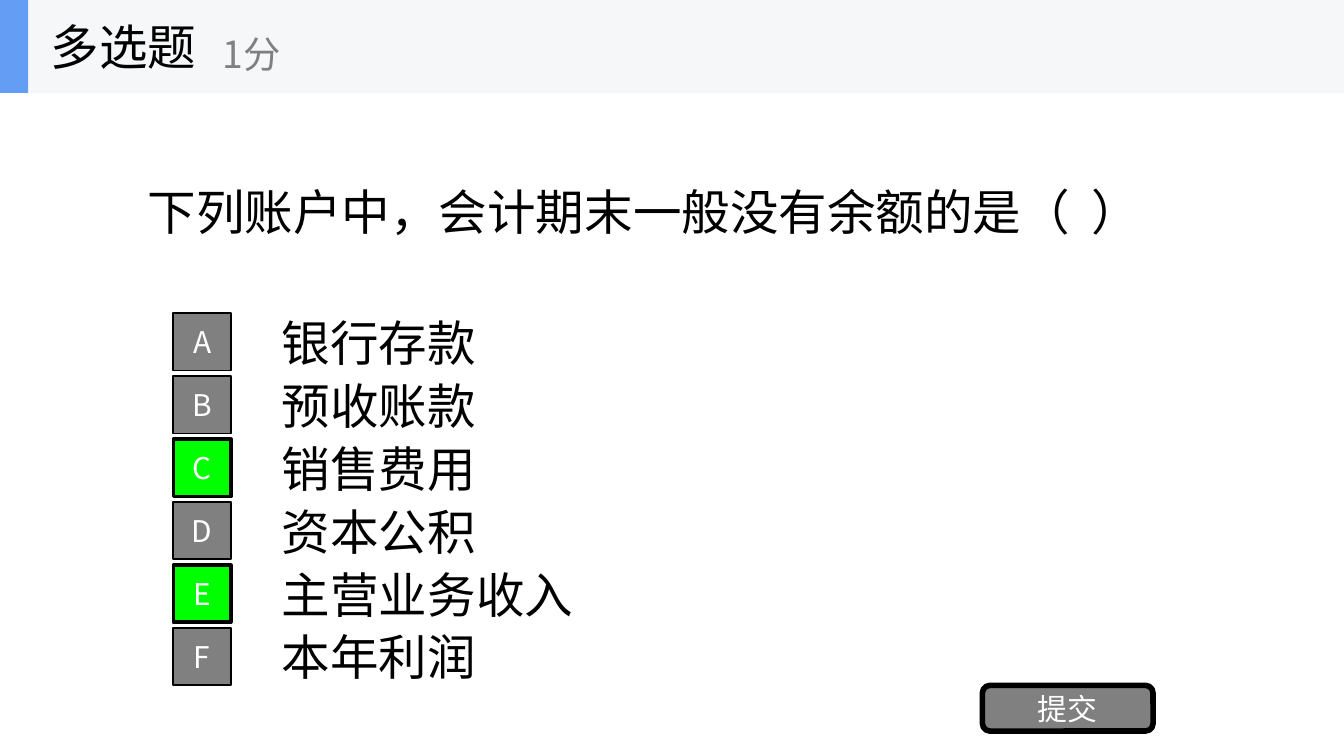
from pptx import Presentation
from pptx.dml.color import RGBColor
from pptx.enum.shapes import MSO_SHAPE
from pptx.enum.text import MSO_ANCHOR, PP_ALIGN
from pptx.oxml.ns import qn
from pptx.util import Inches, Pt
from lxml import etree

RECTANGLE = MSO_SHAPE.RECTANGLE
ROUNDED = MSO_SHAPE.ROUNDED_RECTANGLE
MIDDLE = MSO_ANCHOR.MIDDLE
LEFT, CENTER = PP_ALIGN.LEFT, PP_ALIGN.CENTER

WIDTH = 10
HEIGHT = WIDTH * 9 / 16
FONT = "Noto Sans CJK SC"
COLORS = {
    "text": "000000",
    "muted": "808080",
    "button": "808080",
    "correct": "00FF00",
    "button_text": "FFFFFF",
    "outline": "000000",
    "header": "F6F7F8",
    "accent": "639EF4",
}
QUESTION = "下列账户中，会计期末一般没有余额的是（  ）"
OPTIONS = ["银行存款", "预收账款", "销售费用", "资本公积", "主营业务收入", "本年利润"]
CORRECT = "CE"


def color(name):
    return RGBColor.from_string(COLORS[name])


def write(shape, text, size=26, ink="text", align=LEFT):
    frame = shape.text_frame
    frame.word_wrap = True
    frame.vertical_anchor = MIDDLE
    paragraph = frame.paragraphs[0]
    paragraph.alignment = align
    run = paragraph.add_run()
    run.text = text
    run.font.size = Pt(size)
    run.font.color.rgb = color(ink)
    run.font.name = FONT
    east_asian = etree.SubElement(run.font._element, qn("a:ea"))
    east_asian.set("typeface", FONT)


def add_text(slide, box, text, **text_format):
    write(slide.shapes.add_textbox(*map(Inches, box)), text, **text_format)


def add_block(slide, box, fill, kind=RECTANGLE, outline=0):
    shape = slide.shapes.add_shape(kind, *map(Inches, box))
    shape.shadow.inherit = False
    shape.fill.solid()
    shape.fill.fore_color.rgb = color(fill)
    if outline:
        shape.line.color.rgb = color("outline")
        shape.line.width = Pt(outline)
    else:
        shape.line.fill.background()
    return shape


def add_button(slide, box, text, fill="button", **block_format):
    button = add_block(slide, box, fill, **block_format)
    frame = button.text_frame
    frame.margin_left = frame.margin_right = 0
    frame.margin_top = frame.margin_bottom = 0
    write(button, text, size=16, ink="button_text", align=CENTER)


def add_header(slide, box):
    left, top, width, height = box
    add_block(slide, box, "header")
    add_block(slide, (left, top, 0.021 * width, height), "accent")
    add_text(slide, (left + 0.028 * width, top, 0.208 * width, height), "多选题")
    score_box = (left + 0.156 * width, top + 0.17 * height,
                 0.25 * width, 0.81 * height)
    add_text(slide, score_box, "1分", size=20, ink="muted")


def add_options(slide, box):
    """Stack one row per option: a square letter button, then the answer."""
    left, top, width, height = box
    row_height = height / len(OPTIONS)
    side = 0.91 * row_height
    text_height = 1.13 * row_height
    text_left = left + 0.092 * width
    for row, answer in enumerate(OPTIONS):
        letter = "ABCDEF"[row]
        middle = top + (row + 0.5) * row_height
        is_correct = letter in CORRECT
        add_text(slide, (text_left, middle - text_height / 2,
                         left + width - text_left, text_height), answer)
        add_button(slide, (left, middle - side / 2, side, side), letter,
                   fill="correct" if is_correct else "button",
                   outline=2 if is_correct else 1)


def main():
    presentation = Presentation()
    presentation.slide_width = Inches(WIDTH)
    presentation.slide_height = Inches(HEIGHT)
    slide = presentation.slides.add_slide(presentation.slide_layouts[6])
    header_height = 0.123 * HEIGHT
    add_text(slide, (0.1 * WIDTH, header_height, 0.8 * WIDTH, 1.76), QUESTION)
    add_options(slide, (1.29, 2.31, 7.71, 2.81))
    add_button(slide, (7.31, 5.1, 1.27, 0.34), "提交", kind=ROUNDED, outline=3)
    add_header(slide, (0, 0, WIDTH, header_height))
    presentation.save("out.pptx")


if __name__ == "__main__":
    main()
